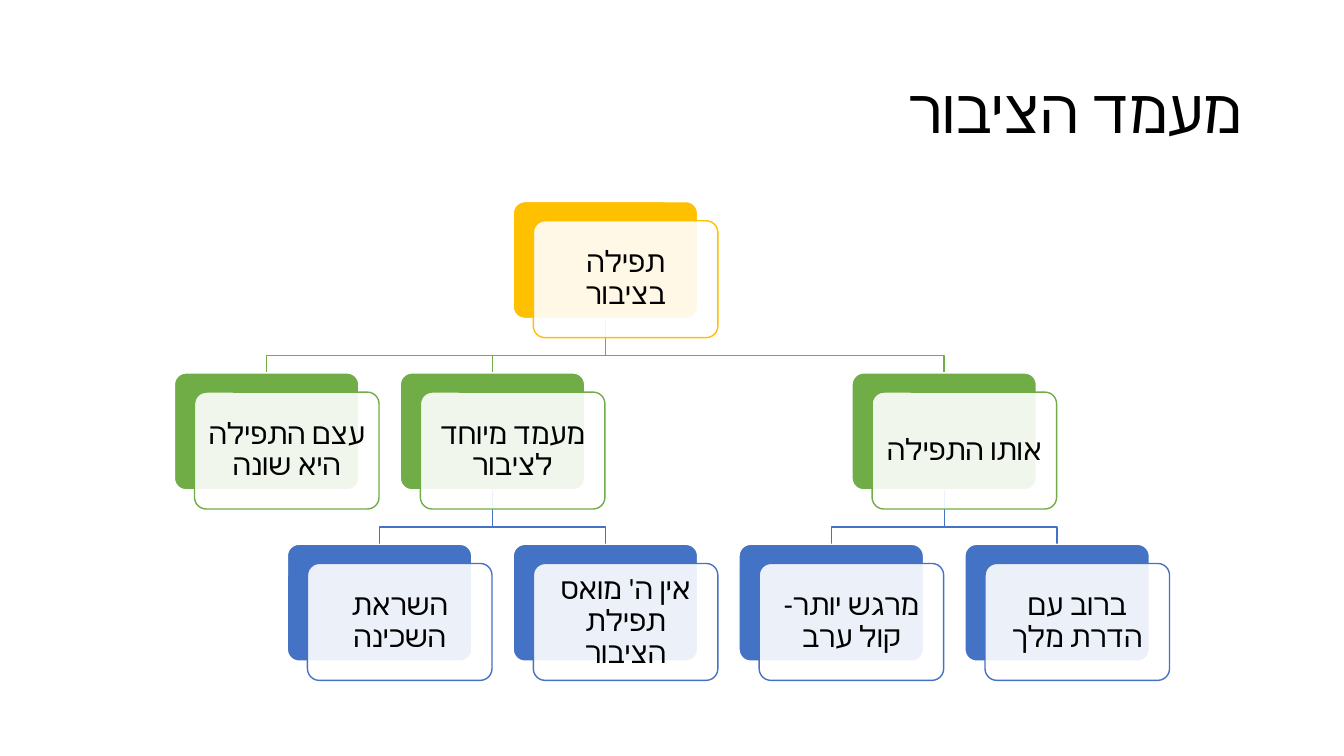
import pptx
import pptx.dml.color
import pptx.enum.shapes
import pptx.enum.text
import pptx.oxml.ns
import pptx.util
from lxml import etree

Inches = pptx.util.Inches
ALIGN = pptx.enum.text.PP_ALIGN
ROUNDED = pptx.enum.shapes.MSO_SHAPE.ROUNDED_RECTANGLE

BLACK = pptx.dml.color.RGBColor(0x00, 0x00, 0x00)
WHITE = pptx.dml.color.RGBColor(0xFF, 0xFF, 0xFF)
GOLD = pptx.dml.color.RGBColor(0xFF, 0xC0, 0x00)
GREEN = pptx.dml.color.RGBColor(0x70, 0xAD, 0x47)
BLUE = pptx.dml.color.RGBColor(0x44, 0x72, 0xC4)
LEVEL_COLORS = [GOLD, GREEN, BLUE]
FONT = "Calibri"

CARD_WIDTH, CARD_HEIGHT = 1.83, 1.16
COLUMN_STEP, ROW_STEP = 1.12, 1.7
FRONT_DX, FRONT_DY = 0.2, 0.19
ELBOW_DROP = 0.37

# Each node: column, text, children
TREE = (3, "תפילה בציבור", [
    (6, "אותו התפילה", [
        (7, "ברוב עם הדרת מלך", []),
        (5, "מרגש יותר- קול ערב", []),
    ]),
    (2, "מעמד מיוחד לציבור", [
        (3, "אין ה' מואס תפילת הציבור", []),
        (1, "השראת השכינה", []),
    ]),
    (0, "עצם התפילה היא שונה", []),
])


def write_hebrew(frame, text, size, alignment):
    frame.word_wrap = True
    frame.vertical_anchor = pptx.enum.text.MSO_ANCHOR.MIDDLE
    frame.text = text
    para = frame.paragraphs[0]
    para.alignment = alignment
    para.line_spacing = 0.9
    para._p.get_or_add_pPr().set("rtl", "1")
    span = para.runs[0]
    span.font.size = pptx.util.Pt(size)
    span.font.name = FONT
    span.font.color.rgb = BLACK
    complex_font = etree.SubElement(span._r.get_or_add_rPr(), pptx.oxml.ns.qn("a:cs"))
    complex_font.set("typeface", FONT)


def add_title(page, left, top, width, height):
    box = page.shapes.add_textbox(Inches(left), Inches(top), Inches(width), Inches(height))
    write_hebrew(box.text_frame, "מעמד הציבור", 44, ALIGN.RIGHT)


def add_panel(page, left, top, fill, line):
    panel = page.shapes.add_shape(
        ROUNDED, Inches(left), Inches(top), Inches(CARD_WIDTH), Inches(CARD_HEIGHT))
    panel.adjustments[0] = 0.1
    panel.shadow.inherit = False
    panel.fill.solid()
    panel.fill.fore_color.rgb = fill
    panel.line.color.rgb = line
    panel.line.width = pptx.util.Pt(1)
    return panel


def add_card(page, left, top, text, color):
    """Coloured back panel with a translucent white text panel offset over it."""
    add_panel(page, left, top, color, WHITE)
    front = add_panel(page, left + FRONT_DX, top + FRONT_DY, WHITE, color)
    white = front.fill._xPr.find(".//" + pptx.oxml.ns.qn("a:srgbClr"))
    etree.SubElement(white, pptx.oxml.ns.qn("a:alpha")).set("val", "90000")
    frame = front.text_frame
    frame.margin_left = frame.margin_right = Inches(0.09)
    frame.margin_top = frame.margin_bottom = Inches(0.09)
    write_hebrew(frame, text, 21, ALIGN.CENTER)


def add_elbow(page, start_x, start_y, end_x, end_y, color):
    bend_y = start_y + ELBOW_DROP
    builder = page.shapes.build_freeform(Inches(start_x), Inches(start_y))
    corners = [(start_x, bend_y), (end_x, bend_y), (end_x, end_y)]
    builder.add_line_segments([(Inches(x), Inches(y)) for x, y in corners], close=False)
    elbow = builder.convert_to_shape()
    elbow.shadow.inherit = False
    elbow.fill.background()
    elbow.line.color.rgb = color
    elbow.line.width = pptx.util.Pt(1)


def add_branches(page, left, top, node, level=0):
    column, _, children = node
    start_x = left + column * COLUMN_STEP + CARD_WIDTH / 2
    for child in children:
        end_x = left + child[0] * COLUMN_STEP + CARD_WIDTH / 2
        add_elbow(page, start_x, top + CARD_HEIGHT, end_x, top + ROW_STEP,
                  LEVEL_COLORS[level + 1])
        add_branches(page, left, top + ROW_STEP, child, level + 1)


def add_cards(page, left, top, node, level=0):
    column, text, children = node
    add_card(page, left + column * COLUMN_STEP, top, text, LEVEL_COLORS[level])
    for child in children:
        add_cards(page, left, top + ROW_STEP, child, level + 1)


def add_hierarchy(page, left, top):
    """Draw all branches first so that the cards lie over them."""
    add_branches(page, left, top, TREE)
    add_cards(page, left, top, TREE)


def main():
    deck = pptx.Presentation()
    deck.slide_width, deck.slide_height = Inches(13.33), Inches(7.5)
    page = deck.slides.add_slide(deck.slide_layouts[6])
    add_title(page, 0.92, 0.4, 11.5, 1.45)
    add_hierarchy(page, 1.73, 2)
    deck.save("out.pptx")


if __name__ == "__main__":
    main()
